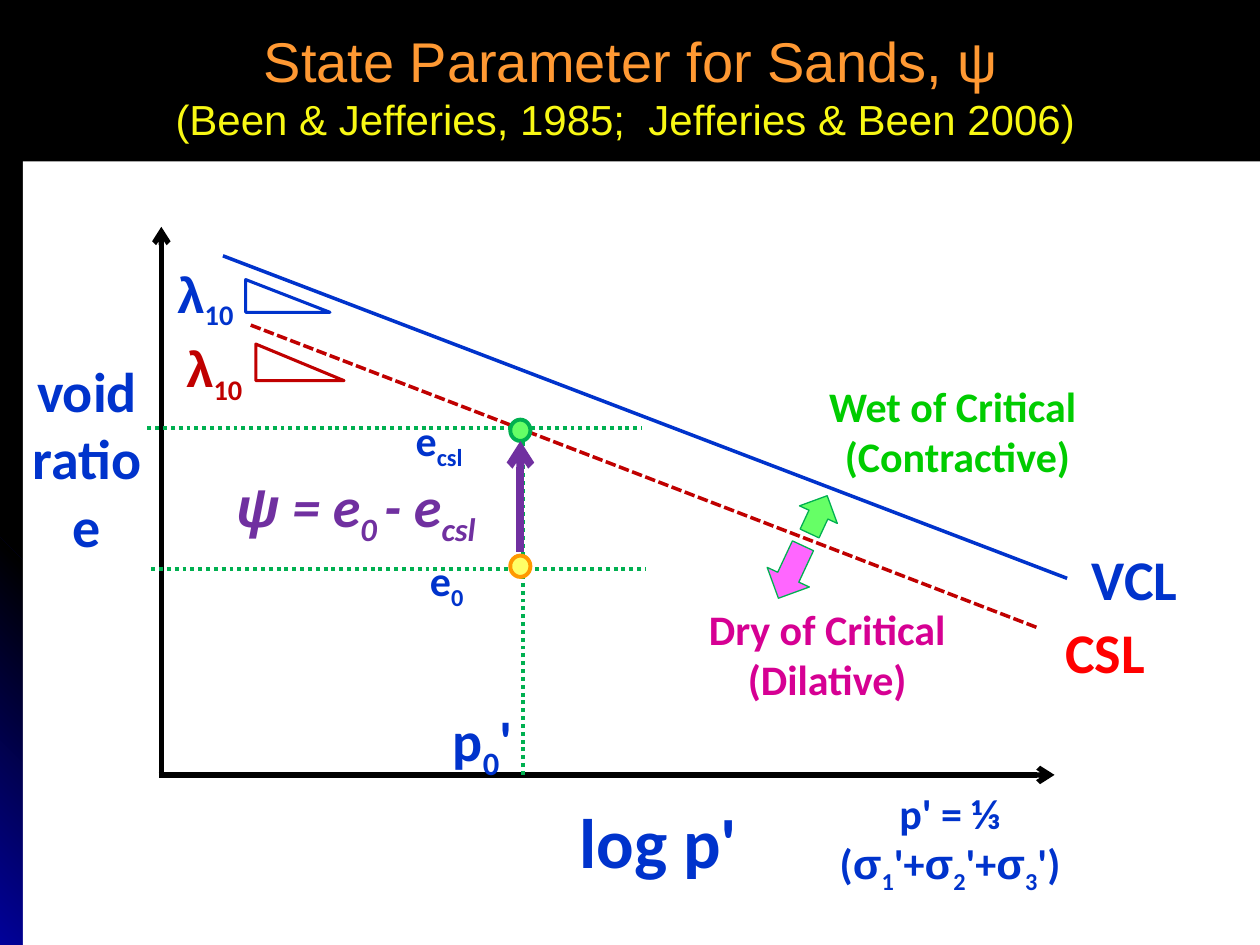
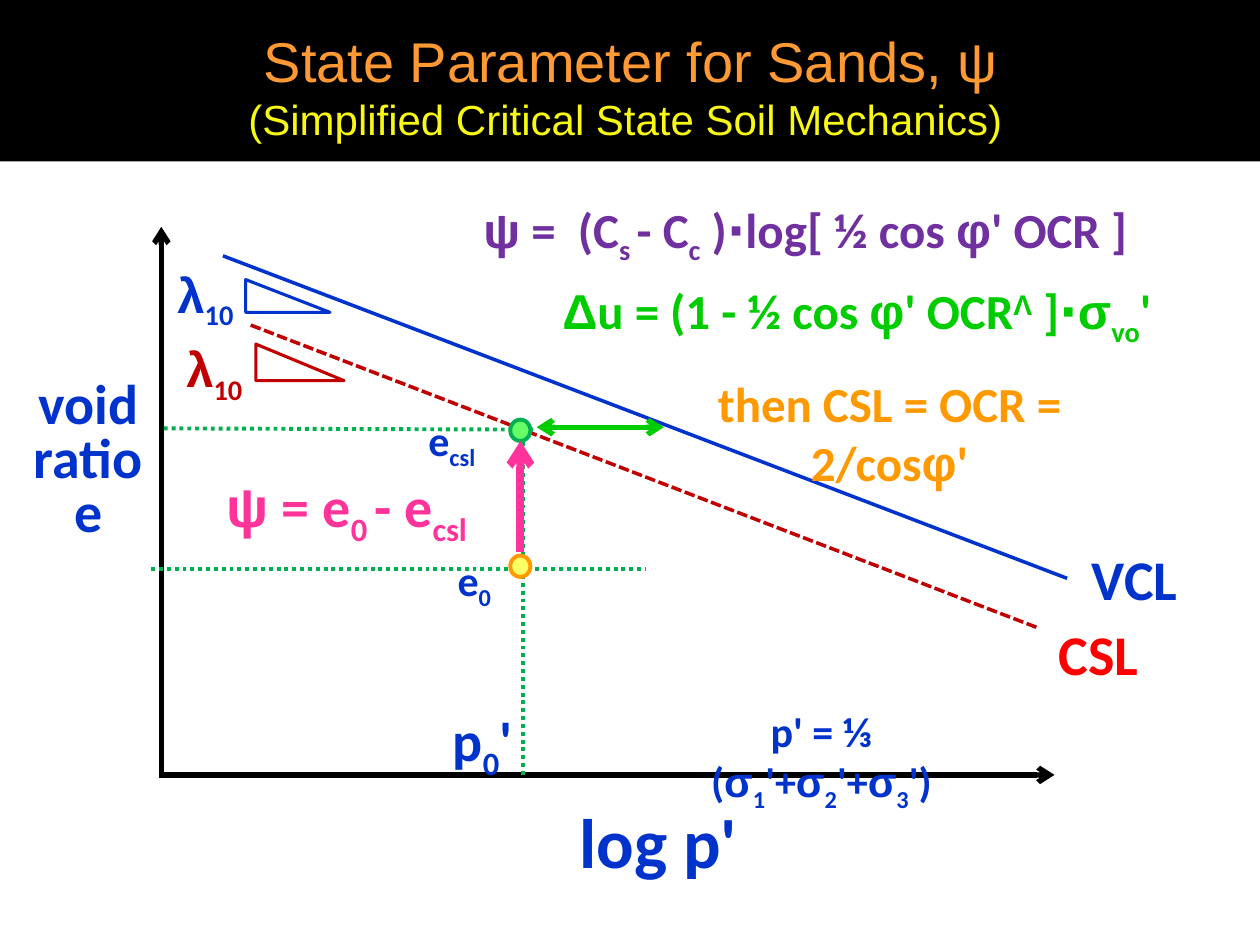
from itertools import groupby

from lxml import etree
from pptx import Presentation
from pptx.dml.color import RGBColor
from pptx.enum.dml import MSO_LINE
from pptx.enum.shapes import MSO_CONNECTOR, MSO_SHAPE
from pptx.enum.text import MSO_ANCHOR, PP_ALIGN
from pptx.oxml.ns import qn
from pptx.util import Pt

STRAIGHT = MSO_CONNECTOR.STRAIGHT
RECTANGLE = MSO_SHAPE.RECTANGLE
RIGHT_TRIANGLE = MSO_SHAPE.RIGHT_TRIANGLE
UP_ARROW = MSO_SHAPE.UP_ARROW
OVAL = MSO_SHAPE.OVAL
DASHED = MSO_LINE.SQUARE_DOT
DOTTED = MSO_LINE.ROUND_DOT
CENTER = PP_ALIGN.CENTER
MIDDLE = MSO_ANCHOR.MIDDLE

BLACK, WHITE, NAVY = "000000", "FFFFFF", "010199"
ORANGE, YELLOW = "FF9933", "F8F814"
BLUE, DARK_RED, RED = "0033CC", "C00000", "FF0000"
GREEN, BRIGHT_GREEN, LIGHT_GREEN = "00B050", "00CC00", "66FF66"
PURPLE, PINK, MAGENTA, ROSE = "7030A0", "FF3399", "D60093", "FF66FF"
AMBER, PALE_YELLOW = "FF9900", "FFFF66"

GREEK = "λσψφΔΛ"
SUPERSCRIPT = "Λ"
SLIDE_W, SLIDE_H = 720, 540
PANEL_TOP = 92.2
AXIS_X, AXIS_Y = 92.2, 442.8
STATE_X = 297.4
E_CSL_Y, E_0_Y = 244.8, 325.4


def rgb(color):
    return RGBColor.from_string(color)


def add_runs(paragraph, text, size, color, bold, italic):
    """Write text; parts between ~ marks are subscripts, Greek is in Arial."""
    for number, part in enumerate(text.split("~")):
        for is_greek, letters in groupby(part, lambda letter: letter in GREEK):
            run = paragraph.add_run()
            run.text = "".join(letters)
            font = run.font
            font.name = "Arial" if is_greek else "Calibri"
            font.size = Pt(size)
            font.bold, font.italic = bold, italic
            font.color.rgb = rgb(color)
            baseline = 30000 if run.text == SUPERSCRIPT else -25000 * (number % 2)
            if baseline:
                run._r.get_or_add_rPr().set("baseline", str(baseline))


def add_label(slide, lines, left, top, width, height, size, color,
              italic=False, wrap=False, spacing=None):
    box = slide.shapes.add_textbox(Pt(left), Pt(top), Pt(width), Pt(height))
    frame = box.text_frame
    frame.word_wrap = wrap
    for number, line in enumerate(lines.split("\n")):
        paragraph = frame.add_paragraph() if number else frame.paragraphs[0]
        paragraph.alignment = CENTER
        paragraph.line_spacing = spacing
        add_runs(paragraph, line, size, color, True, italic)


def add_line(slide, x1, y1, x2, y2, color, weight, dash=None, ends=()):
    line = slide.shapes.add_connector(STRAIGHT, Pt(x1), Pt(y1), Pt(x2), Pt(y2))
    line.line.color.rgb = rgb(color)
    line.line.width = Pt(weight)
    if dash:
        line.line.dash_style = dash
    outline = line.line._get_or_add_ln()
    for end in ends:
        etree.SubElement(outline, qn(f"a:{end}")).set("type", "arrow")
    etree.SubElement(line._element.spPr, qn("a:effectLst"))


def add_figure(slide, preset, left, top, width, height,
               fill=None, outline=None, weight=0.75, rotation=0):
    figure = slide.shapes.add_shape(preset, Pt(left), Pt(top), Pt(width), Pt(height))
    figure.shadow.inherit = False
    figure.rotation = rotation
    if fill:
        figure.fill.solid()
        figure.fill.fore_color.rgb = rgb(fill)
    else:
        figure.fill.background()
    if outline:
        figure.line.color.rgb = rgb(outline)
        figure.line.width = Pt(weight)
    else:
        figure.line.fill.background()
    return figure


def add_corner_glow(slide):
    """Blue corner at the bottom left that fades to black."""
    glow = add_figure(slide, RIGHT_TRIANGLE, 0, 307.4, 231.8, 232.6)
    glow.fill.gradient()
    glow.fill.gradient_angle = 45
    for stop, color, position in zip(glow.fill.gradient_stops, (NAVY, BLACK), (0, 0.5)):
        stop.color.rgb = rgb(color)
        stop.position = position


def add_title(slide, subtitle):
    box = slide.shapes.add_textbox(Pt(36.7), Pt(26.6), Pt(648), Pt(43.9))
    frame = box.text_frame
    frame.word_wrap = True
    frame.vertical_anchor = MIDDLE
    frame.text = f"State Parameter for Sands, ψ\n{subtitle}"
    for paragraph, size, color in zip(frame.paragraphs, (32, 24), (ORANGE, YELLOW)):
        paragraph.alignment = CENTER
        font = paragraph.runs[0].font
        font.name, font.size = "Arial", Pt(size)
        font.color.rgb = rgb(color)


def add_slide(deck, subtitle, panel_left):
    slide = deck.slides.add_slide(deck.slide_layouts[6])
    slide.background.fill.solid()
    slide.background.fill.fore_color.rgb = rgb(BLACK)
    if panel_left:
        add_corner_glow(slide)
    add_title(slide, subtitle)
    add_figure(slide, RECTANGLE, panel_left, PANEL_TOP,
               SLIDE_W - panel_left, SLIDE_H - PANEL_TOP, WHITE)
    return slide


def add_state_diagram(slide):
    """Axes, both state lines with their slopes, and the p0' and e0 guides."""
    add_line(slide, AXIS_X, AXIS_Y, AXIS_X, 129.6, BLACK, 3, ends=["tailEnd"])
    add_line(slide, AXIS_X - 1.5, AXIS_Y, 602.6, AXIS_Y, BLACK, 3, ends=["tailEnd"])
    add_label(slide, "log p'", 323.3, 452.9, 105.8, 55.4, 40, BLUE)
    add_line(slide, 127.4, 146.2, 609.8, 330.5, BLUE, 2)
    add_line(slide, 143.3, 185.8, 592.6, 358.6, DARK_RED, 2, DASHED)
    add_label(slide, "VCL", 616.3, 307.4, 64.1, 46.1, 32, BLUE)
    add_figure(slide, RIGHT_TRIANGLE, 146.2, 196.6, 50.4, 20.9, None, DARK_RED, 1.75)
    add_figure(slide, RIGHT_TRIANGLE, 140.4, 159.8, 48.2, 18.7, None, BLUE, 1.75)
    add_label(slide, "λ~10", 92.9, 147.6, 49, 41, 28, BLUE)
    add_label(slide, "λ~10", 97.9, 190.1, 49, 41, 28, DARK_RED)
    add_label(slide, "p~0~'", 250.6, 399.6, 50.4, 46.1, 32, BLUE)
    add_line(slide, 298.8, AXIS_Y, 298.8, 246.2, GREEN, 2.25, DOTTED)
    add_line(slide, 86.4, E_0_Y, 368.6, E_0_Y, GREEN, 2.25, DOTTED)


def add_moving_labels(slide, void_ratio_at, void_ratio_spacing, csl_at, stress_at,
                      e_0_left, e_csl_left):
    """Labels whose place differs between the slides."""
    add_label(slide, "void\nratio\ne", *void_ratio_at, 77.8, 123.8, 32, BLUE,
              spacing=void_ratio_spacing)
    add_label(slide, "CSL", *csl_at, 60.5, 46.1, 32, RED)
    add_label(slide, "p' = ⅓ (σ~1~'+σ~2~'+σ~3~')", *stress_at, 151.2, 65.5, 24, BLUE,
              wrap=True)
    add_label(slide, "e~0", e_0_left, 313.2, 35.3, 36, 24, BLUE)
    add_label(slide, "e~csl", e_csl_left, 233.3, 43.9, 36, 24, BLUE)


def add_state_parameter(slide, left, color, italic):
    """Equation for ψ, the two states and the arrow between them."""
    add_label(slide, "ψ = e~0 ~- e~csl", left, 265.7, 156.2, 46.1, 32, color, italic)
    add_figure(slide, OVAL, 291.6, 317.5, 11.5, 12.2, PALE_YELLOW, AMBER, 2.25)
    add_figure(slide, OVAL, 291.6, 239.8, 11.5, 12.2, LIGHT_GREEN, GREEN, 2.25)
    add_line(slide, STATE_X, 315.4, STATE_X, 252, color, 4.5, ends=["tailEnd"])


def add_wet_and_dry_sides(slide):
    add_label(slide, "Dry of Critical (Dilative)", 370.8, 341.3, 203.8, 65.5, 24,
              MAGENTA, wrap=True)
    add_label(slide, "Wet of Critical \n(Contractive)", 465.8, 213.8, 162.7, 65.5, 24,
              BRIGHT_GREEN)
    add_figure(slide, UP_ARROW, 455.8, 282.2, 23.8, 23.8, LIGHT_GREEN, GREEN, rotation=25)
    add_figure(slide, UP_ARROW, 438.5, 310.3, 26.6, 33.1, ROSE, GREEN, rotation=205)


def add_simplified_equations(slide):
    add_label(slide, "ψ =  (C~s ~- C~c~ )∙log[ ½ cos φ' OCR ] ",
              268.6, 110.2, 383, 41, 28, PURPLE)
    add_label(slide, "Δu = (1 - ½ cos φ' OCRΛ ]∙σ~vo~' ",
              313.2, 157, 352.8, 41, 28, BRIGHT_GREEN)
    add_label(slide, "then CSL = OCR = 2/cosφ'", 400.3, 210.2, 216, 75, 28, AMBER,
              wrap=True)
    add_line(slide, 306.7, 244.1, 379.4, 244.1, BRIGHT_GREEN, 3,
             ends=["headEnd", "tailEnd"])


def main():
    deck = Presentation()
    deck.slide_width, deck.slide_height = Pt(SLIDE_W), Pt(SLIDE_H)

    sands = add_slide(deck, "(Been & Jefferies, 1985;  Jefferies & Been 2006) ", 13)
    add_state_diagram(sands)
    add_moving_labels(sands, (10.8, 200.2), None, (601.2, 349.2), (467.3, 446.4),
                      237.6, 229)
    add_wet_and_dry_sides(sands)
    add_line(sands, 84.2, E_CSL_Y, 366.5, E_CSL_Y, GREEN, 2.25, DOTTED)
    add_state_parameter(sands, 125.3, PURPLE, True)

    simplified = add_slide(deck, "(Simplified Critical State Soil Mechanics) ", 0)
    add_state_diagram(simplified)
    add_moving_labels(simplified, (11.5, 214.6), 0.8, (597.6, 350.6), (393.8, 399.6),
                      253.4, 236.2)
    add_simplified_equations(simplified)
    add_line(simplified, 93.6, E_CSL_Y, 304.6, 245.5, GREEN, 2.25, DOTTED)
    add_state_parameter(simplified, 120.2, PINK, False)

    deck.save("out.pptx")


if __name__ == "__main__":
    main()
